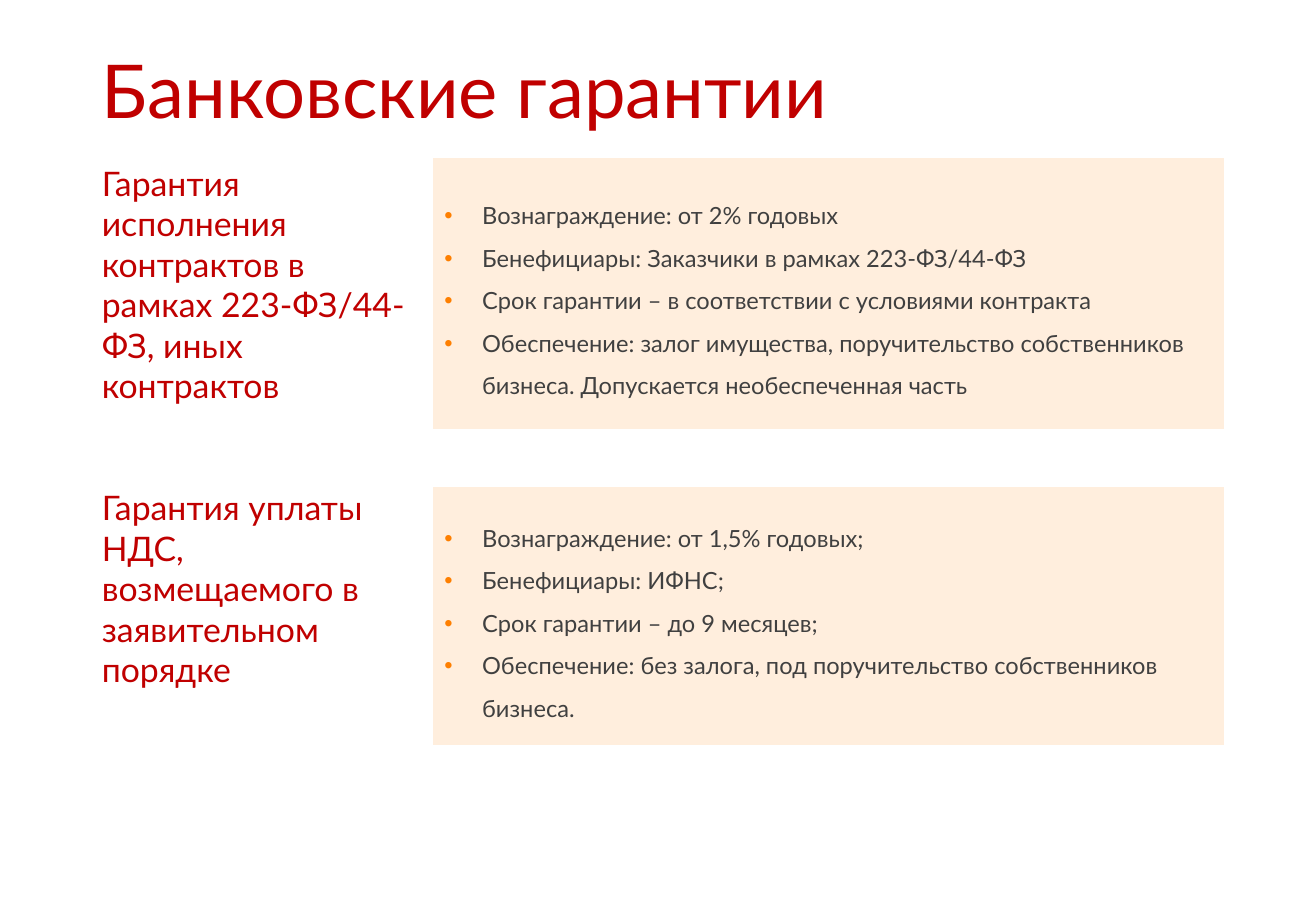
from lxml.etree import SubElement as Sub
from pptx import Presentation as Deck
from pptx.dml.color import RGBColor as Rgb
from pptx.enum.shapes import MSO_SHAPE as Form
from pptx.enum.text import MSO_ANCHOR as Anchor, PP_ALIGN as Align
from pptx.oxml.ns import qn
from pptx.util import Inches, Pt

HUES = {"red": "C00000", "text": "404040", "dot": "FE7F00",
        "panel": "FFEEDD", "edge": "FFFFFF"}
LEFT, MID = 6.83, 32.87
ROWS = [
    (17.2, 30, 17.2,
     "Гарантия исполнения контрактов в рамках 223-ФЗ/44-ФЗ, иных контрактов",
     ["Вознаграждение: от 2% годовых",
      "Бенефициары: Заказчики в рамках 223-ФЗ/44-ФЗ",
      "Срок гарантии – в соответствии с условиями контракта",
      "Обеспечение: залог имущества, поручительство собственников бизнеса. "
      "Допускается необеспеченная часть"]),
    (53.33, 28.53, 52.8,
     "Гарантия уплаты НДС, возмещаемого в заявительном порядке",
     ["Вознаграждение: от 1,5% годовых;",
      "Бенефициары: ИФНС;",
      "Срок гарантии – до 9 месяцев;",
      "Обеспечение: без залога, под поручительство собственников бизнеса."]),
]


class Page:
    """Holds the style and the slide; lengths are percent of its size."""

    def __init__(self, deck, font):
        self.wide, self.high = deck.slide_width, deck.slide_height
        self.slide = deck.slides.add_slide(deck.slide_layouts[6])
        self.font = font

    def place(self, x, y, w, h):
        return [round(part * side / 100) for part, side in
                zip((x, y, w, h), (self.wide, self.high) * 2)]

    def hue(self, name):
        return Rgb.from_string(HUES[name])

    def style(self, par, size, hue, space):
        par.alignment = Align.LEFT
        par.line_spacing = space
        par.font.name = self.font
        par.font.size = Pt(size)
        par.font.color.rgb = self.hue(hue)

    def label(self, text, box, size, space=1.0):
        frame = self.slide.shapes.add_textbox(*self.place(*box)).text_frame
        frame.word_wrap = True
        par = frame.paragraphs[0]
        par.text = text
        self.style(par, size, "red", space)

    def bullet(self, par):
        props = par._p.get_or_add_pPr()
        props.set("marL", str(Inches(0.31)))
        props.set("indent", str(-Inches(0.31)))
        Sub(Sub(props, qn("a:buClr")), qn("a:srgbClr"), val=HUES["dot"])
        Sub(props, qn("a:buFont"), typeface="Arial")
        Sub(props, qn("a:buChar"), char="•")

    def panel(self, items, box):
        shape = self.slide.shapes.add_shape(Form.RECTANGLE, *self.place(*box))
        shape.shadow.inherit = False
        shape.fill.solid()
        shape.fill.fore_color.rgb = self.hue("panel")
        shape.line.color.rgb = self.hue("edge")
        shape.line.width = Pt(1)
        frame = shape.text_frame
        frame.word_wrap = True
        frame.vertical_anchor = Anchor.MIDDLE
        for num, item in enumerate(items):
            par = frame.add_paragraph() if num else frame.paragraphs[0]
            par.text = item
            self.bullet(par)
            self.style(par, 14, "text", 1.5)


def main():
    deck = Deck()
    deck.slide_width, deck.slide_height = Inches(10.83), Inches(7.5)
    page = Page(deck, "Lato")
    page.label("Банковские гарантии", (LEFT, 5.33, 86.24, 11.87), 44, 0.9)
    for top, high, head, name, items in ROWS:
        page.panel(items, (MID, top, 60.2, high))
        page.label(name, (LEFT, head, 25.12, 28), 20)
    deck.save("out.pptx")


if __name__ == "__main__":
    main()
